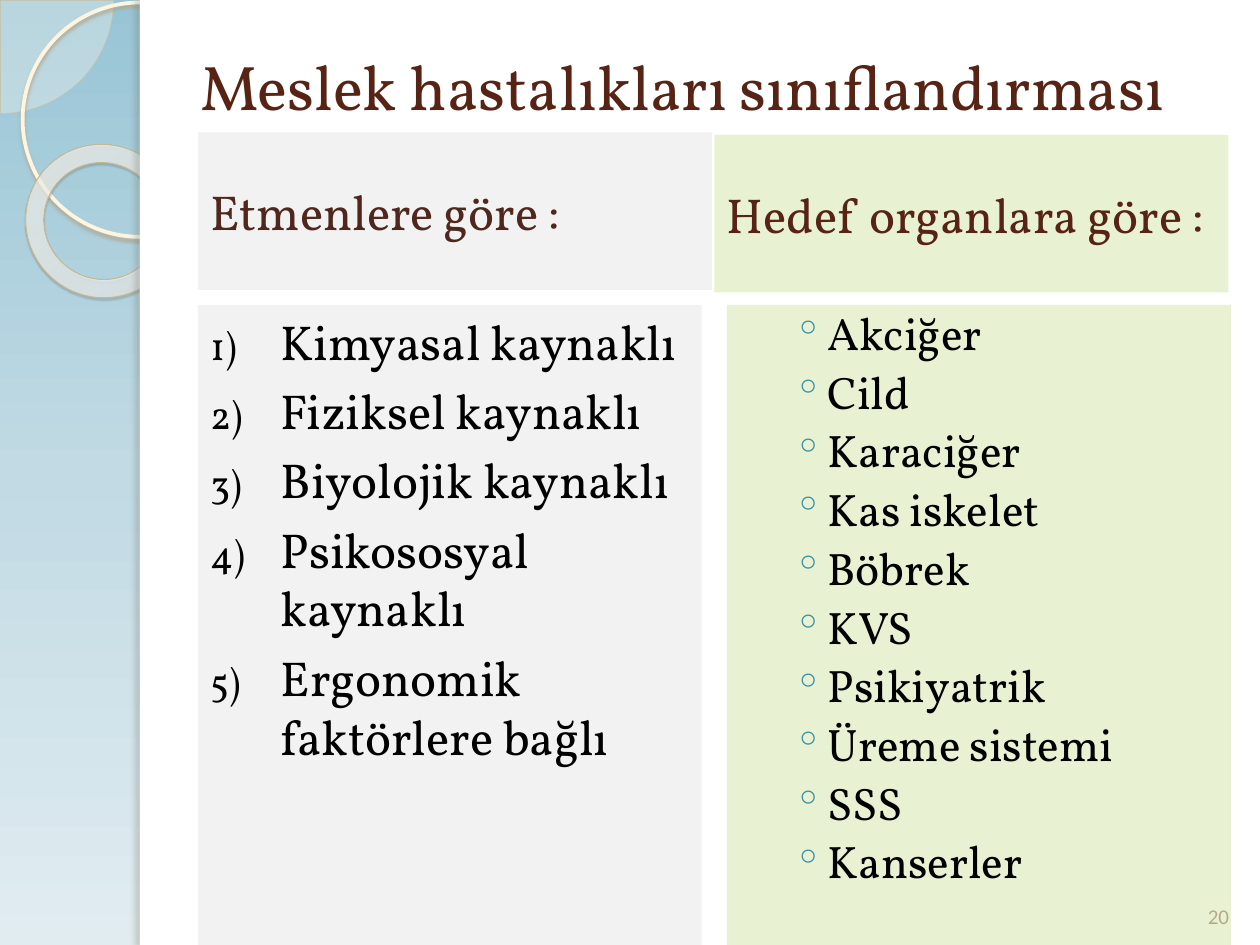
from lxml import etree
from pptx import Presentation
from pptx import util as u
from pptx.dml.color import RGBColor
from pptx.enum import shapes, text
from pptx.oxml import ns

Inches = u.Inches
SHAPE = shapes.MSO_SHAPE
FONT = "Vollkorn"

COLORS = {
    "white": "FFFFFF", "black": "000000", "gray": "F2F2F2", "green": "E8F2D3",
    "title": "572314", "heading": "4F271C", "bullet": "3891A7", "number": "B6A98A",
    "pie": "FEFAF4", "pie_line": "D3C39F", "ring": "FFF5DE", "donut_line": "C7B893",
    "ring_shadow": "B0A68F", "donut_shadow": "5A5444", "edge_shadow": "736F63",
}
BACKGROUND = [(0, "98C5D6", 100), (50, "C1DAE4", 100), (100, "E1ECF1", 100)]
DONUT = [(0, "FFFCF6", 70), (70, "FFFEFB", 55), (100, "F0D28E", 60)]

CAUSES = ["Kimyasal kaynaklı", "Fiziksel kaynaklı", "Biyolojik kaynaklı",
          "Psikososyal kaynaklı", "Ergonomik faktörlere bağlı"]
ORGANS = ["Akciğer", "Cild", "Karaciğer", "Kas iskelet", "Böbrek", "KVS",
          "Psikiyatrik", "Üreme sistemi", "SSS", "Kanserler"]


def rgb(name):
    return RGBColor.from_string(COLORS[name])


def sub(parent, tag, **attrs):
    el = etree.SubElement(parent, ns.qn(tag))
    for key, value in attrs.items():
        el.set(key, str(value))
    return el


def add_color(parent, value, alpha=100):
    clr = sub(parent, "a:srgbClr", val=value)
    if alpha < 100:
        sub(clr, "a:alpha", val=alpha * 1000)


def set_gradient(fill, root, stops, circle=None):
    """Top-down gradient, or a circular one around the given rectangle."""
    fill.gradient()
    grad = root.find(".//" + ns.qn("a:gradFill"))
    for child in list(grad):
        grad.remove(child)
    stop_list = sub(grad, "a:gsLst")
    for pos, value, alpha in stops:
        add_color(sub(stop_list, "a:gs", pos=pos * 1000), value, alpha)
    if circle:
        way = sub(grad, "a:path", path="circle")
        sub(way, "a:fillToRect", **{k: v * 1000 for k, v in zip("ltrb", circle)})
    else:
        sub(grad, "a:lin", ang=5400000, scaled=0)


def add_figure(s, kind, box, fill=None, alpha=100, line=None, width=0):
    sp = s.shapes.add_shape(kind, *map(Inches, box))
    sp.shadow.inherit = False
    if fill:
        sp.fill.solid()
        sp.fill.fore_color.rgb = rgb(fill)
        if alpha < 100:
            clr = sp._element.spPr.find(".//" + ns.qn("a:srgbClr"))
            sub(clr, "a:alpha", val=alpha * 1000)
    else:
        sp.fill.background()
    if line:
        sp.line.color.rgb = rgb(line)
        sp.line.width = u.Pt(width)
    else:
        sp.line.fill.background()
    return sp


def add_shadow(sp, color, alpha, blur, dist, angle):
    effects = sp._element.spPr.find(ns.qn("a:effectLst"))
    shadow = sub(effects, "a:outerShdw", blurRad=u.Pt(blur), dist=u.Pt(dist),
                 dir=angle * 60000, algn="tl", rotWithShape=0)
    add_color(shadow, COLORS[color], alpha)


def write(sp, lines, size, color, anchor, font=FONT, align=text.PP_ALIGN.LEFT):
    tf = sp.text_frame
    tf.word_wrap = True
    tf.vertical_anchor = anchor
    tf.text = "\n".join(lines)
    for p in tf.paragraphs:
        p.alignment = align
        for r in p.runs:
            r.font.name = font
            r.font.size = u.Pt(size)
            r.font.color.rgb = rgb(color)
    return tf.paragraphs


def add_label(s, box, label, size, color, anchor, **style):
    write(s.shapes.add_textbox(*map(Inches, box)), [label], size, color, anchor, **style)


def add_heading(s, box, label, fill, color):
    sp = add_figure(s, SHAPE.RECTANGLE, box, fill)
    write(sp, [label], 28, color, text.MSO_ANCHOR.MIDDLE)


def add_list(s, left, lines, fill, size, before, indent, hang, numbered=False):
    sp = add_figure(s, SHAPE.RECTANGLE, (left, 2.42, 4, 5.1), fill)
    for p in write(sp, lines, size, "black", text.MSO_ANCHOR.TOP):
        p.space_before = u.Pt(before)
        if not numbered:
            p.line_spacing = 0.9
        pPr = p._p.get_or_add_pPr()
        pPr.set("marL", str(Inches(indent)))
        pPr.set("indent", str(-Inches(hang)))
        if numbered:
            sub(pPr, "a:buSzPct", val=80000)
            sub(pPr, "a:buFont", typeface=FONT)
            sub(pPr, "a:buAutoNum", type="arabicParenR")
        else:
            add_color(sub(pPr, "a:buClr"), COLORS["bullet"])
            sub(pPr, "a:buFont", typeface=FONT)
            sub(pPr, "a:buChar", char="◦")


def add_decoration(s):
    # Quarter disc in the corner
    pie = add_figure(s, SHAPE.PIE, (-0.89, -0.89, 1.79, 1.79), "pie", 33, "pie_line", 0.25)
    pie.adjustments[0] = 0
    pie.adjustments[1] = 54
    # Thin ring
    ring = add_figure(s, SHAPE.OVAL, (0.18, 0.02, 1.86, 1.86), line="ring", width=2.15)
    add_shadow(ring, "ring_shadow", 85, 2, 2, 90)
    # Glassy donut
    donut = add_figure(s, SHAPE.DONUT, (0.2, 1.15, 1.23, 1.21), line="donut_line", width=0.58)
    donut.adjustments[0] = 0.12
    donut.rotation = 38.6
    set_gradient(donut.fill, donut._element.spPr, DONUT, circle=(-408, -50, 508, 150))
    add_shadow(donut, "donut_shadow", 35, 1, 1.2, 75)
    # White page with a shaded left edge
    add_figure(s, SHAPE.RECTANGLE, (1.11, 0, 8.89, 7.5), "white")
    edge = add_figure(s, SHAPE.RECTANGLE, (1.11, 0, 0.08, 7.5), "white")
    add_shadow(edge, "edge_shadow", 25, 3, 3, 180)


def main():
    prs = Presentation()
    prs.slide_width, prs.slide_height = Inches(10), Inches(7.5)
    s = prs.slides.add_slide(prs.slide_layouts[6])
    set_gradient(s.background.fill, s._element, BACKGROUND)
    add_decoration(s)

    # Left column: causes
    add_heading(s, (1.57, 1.05, 4.08, 1.25), "Etmenlere göre :", "gray", "heading")
    add_list(s, 1.57, CAUSES, "gray", 28, 6, 0.56, 0.56, numbered=True)

    # Right column: target organs
    add_list(s, 5.77, ORGANS, "green", 26, 5.5, 0.7, 0.26)
    add_heading(s, (5.67, 1.07, 4.08, 1.25), "Hedef organlara göre :", "green", "title")

    # Title and slide number
    add_label(s, (1.49, 0.05, 8.2, 1.25), "Meslek hastalıkları sınıflandırması",
              36, "title", text.MSO_ANCHOR.MIDDLE)
    add_label(s, (9.42, 6.9, 0.5, 0.52), "20", 12, "number", text.MSO_ANCHOR.BOTTOM,
              font="Calibri", align=text.PP_ALIGN.CENTER)
    prs.save("out.pptx")


if __name__ == "__main__":
    main()
